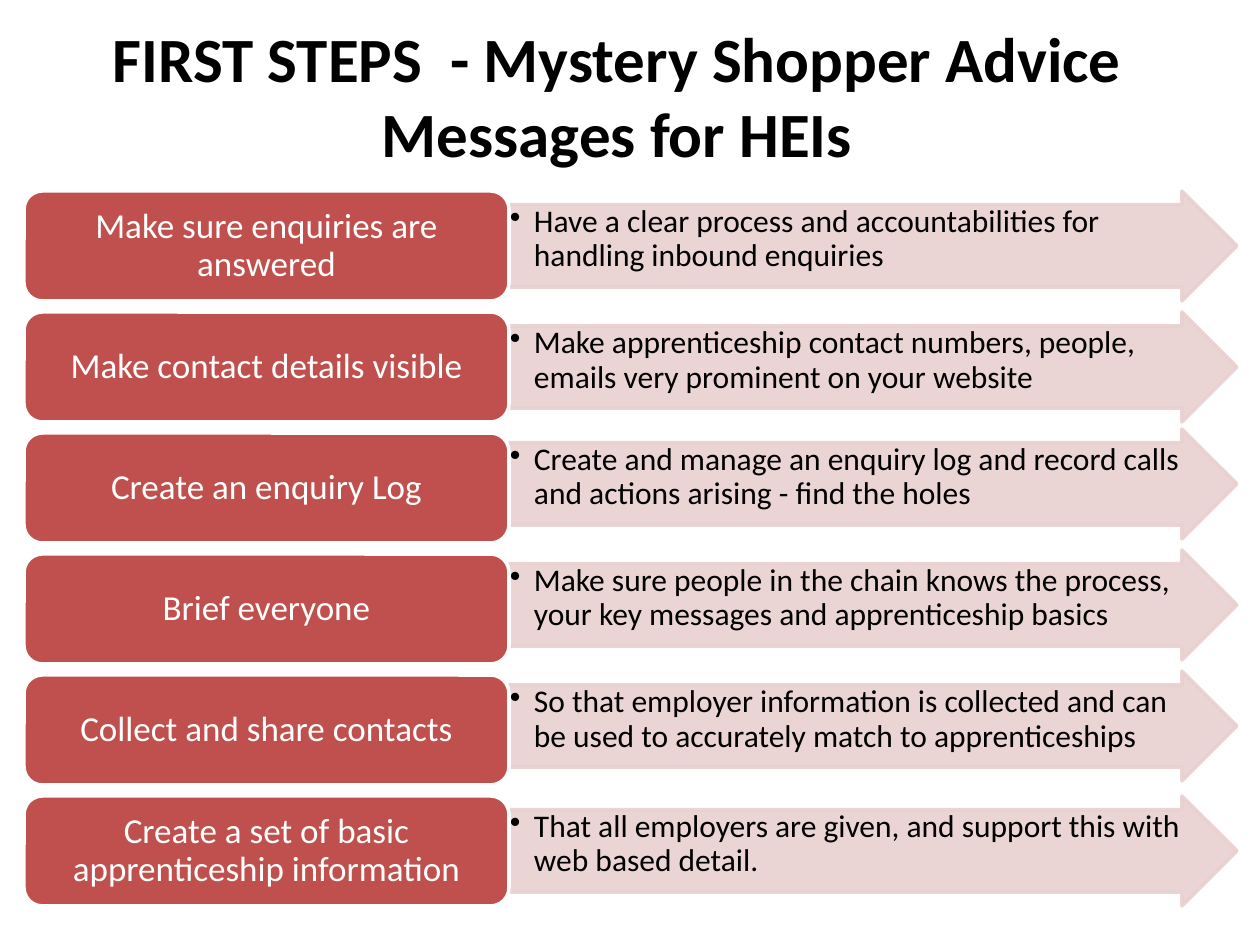
from lxml import etree
from pptx import Presentation
from pptx import util as u
from pptx.dml import color
from pptx.enum import shapes, text
from pptx.oxml import ns

PX = 914400 / 126
FONT = "Calibri"
RED, PINK, BLACK, WHITE = "C0504D", "E8D0D0", "000000", "FFFFFF"
PITCH, ROW_HEIGHT = 121, 110
LABEL_WIDTH, ARROW_WIDTH = 485, 728

# label, advice, vertical shift of the arrow against its label
STEPS = [
    ("Make sure enquiries are answered",
     "Have a clear process and accountabilities for handling inbound enquiries", 0),
    ("Make contact details visible",
     "Make apprenticeship contact numbers, people, emails very prominent on your website", 0),
    ("Create an enquiry Log",
     "Create and manage an enquiry log and record calls and actions arising - find the holes", -4),
    ("Brief everyone",
     "Make sure people in the chain knows the process, your key messages and apprenticeship basics", -4),
    ("Collect and share contacts",
     "So that employer information is collected and can be used to accurately match to apprenticeships", -4),
    ("Create a set of basic apprenticeship information",
     "That all employers are given, and support this with web based detail.", 0),
]


def px(length):
    return u.Emu(round(length * PX))


def rgb(value):
    return color.RGBColor.from_string(value)


def add_bullet(paragraph, indent):
    properties = paragraph._p.get_or_add_pPr()
    properties.set("marL", str(px(indent)))
    properties.set("indent", str(-px(indent)))
    etree.SubElement(properties, ns.qn("a:buChar")).set("char", "•")


def set_text(shape, content, size, hex_color, align=text.PP_ALIGN.CENTER,
             anchor=text.MSO_ANCHOR.MIDDLE, insets=(10, 5), spacing=None,
             bold=False, bullet_indent=None):
    frame = shape.text_frame
    frame.word_wrap = True
    frame.auto_size = text.MSO_AUTO_SIZE.NONE
    frame.vertical_anchor = anchor
    frame.margin_left = frame.margin_right = px(insets[0])
    frame.margin_top = frame.margin_bottom = px(insets[1])
    frame.text = content
    paragraph = frame.paragraphs[0]
    paragraph.alignment = align
    if spacing:
        paragraph.line_spacing = spacing
    if bullet_indent:
        paragraph.level = 1
        add_bullet(paragraph, bullet_indent)
    font = paragraph.runs[0].font
    font.name, font.size, font.bold = FONT, u.Pt(size), bold
    font.color.rgb = rgb(hex_color)


def add_block(slide, preset, left, top, width, height, fill, line, opacity=100):
    shape = slide.shapes.add_shape(preset, px(left), px(top), px(width), px(height))
    shape.shadow.inherit = False
    shape.fill.solid()
    shape.fill.fore_color.rgb = rgb(fill)
    shape.line.color.rgb = rgb(line)
    shape.line.width = u.Pt(2)
    if opacity < 100:
        for value in shape._element.spPr.iter(ns.qn("a:srgbClr")):
            etree.SubElement(value, ns.qn("a:alpha")).set("val", str(opacity * 1000))
    return shape


def add_title(slide, left, top, width, height):
    title = slide.shapes.title
    title.left, title.top, title.width, title.height = map(px, (left, top, width, height))
    set_text(title, "FIRST STEPS  - Mystery Shopper Advice Messages for HEIs",
             36, BLACK, insets=(13, 6), bold=True)


def add_step(slide, left, top, label, advice, shift):
    arrow = add_block(slide, shapes.MSO_SHAPE.RIGHT_ARROW, left + LABEL_WIDTH, top + shift,
                      ARROW_WIDTH, ROW_HEIGHT, PINK, PINK, opacity=90)
    arrow.adjustments[0], arrow.adjustments[1] = 0.75, 0.5
    set_text(arrow, advice, 18, BLACK, align=text.PP_ALIGN.LEFT, anchor=text.MSO_ANCHOR.TOP,
             insets=(1, 1), spacing=0.9, bullet_indent=24)
    box = add_block(slide, shapes.MSO_SHAPE.ROUNDED_RECTANGLE, left, top,
                    LABEL_WIDTH, ROW_HEIGHT, RED, WHITE)
    set_text(box, label, 20, WHITE, spacing=0.9)


def add_steps(slide, left, top):
    for row, step in enumerate(STEPS):
        add_step(slide, left, top + row * PITCH, *step)


def main():
    presentation = Presentation()
    presentation.slide_width, presentation.slide_height = px(1260), px(945)
    slide = presentation.slides.add_slide(presentation.slide_layouts[5])
    add_title(slide, 50, 16, 1134, 158)
    add_steps(slide, 24, 191)
    presentation.save("out.pptx")


if __name__ == "__main__":
    main()
